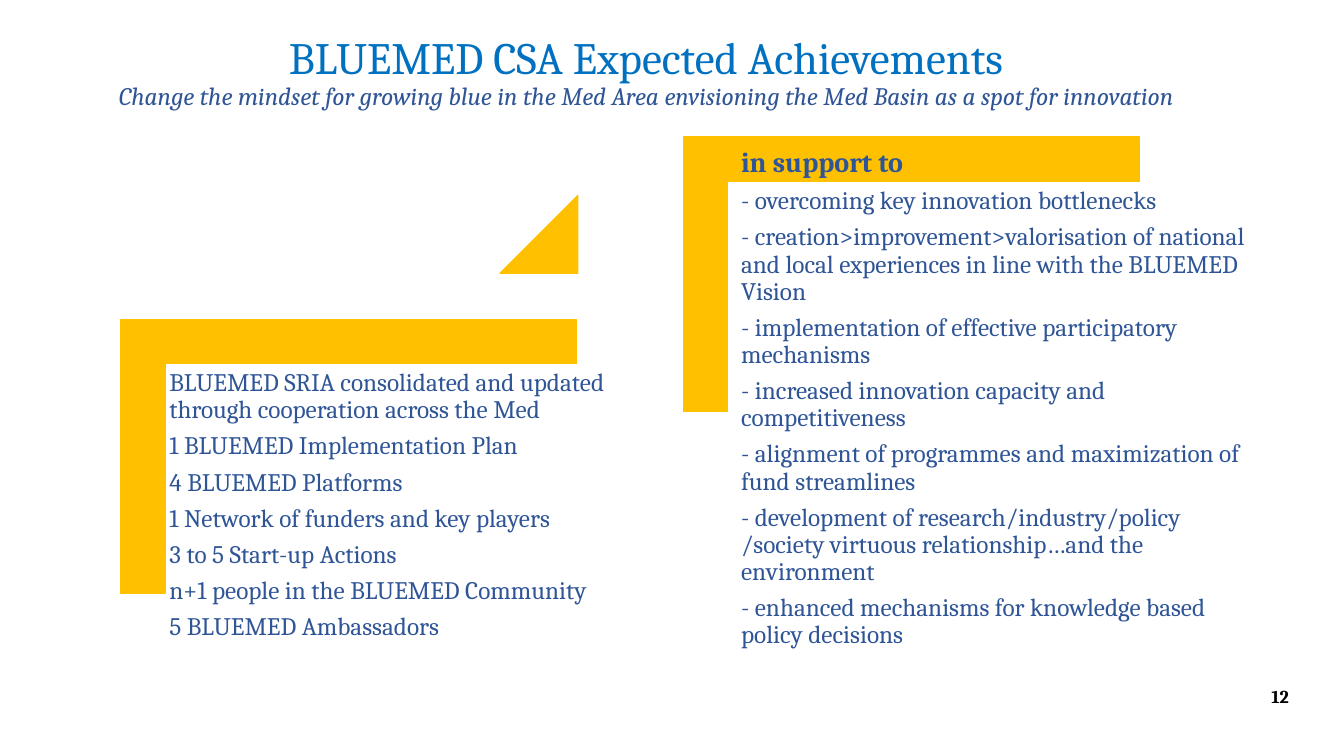
"""Build the slide on the expected achievements of BLUEMED CSA."""
from dataclasses import dataclass

from pptx import Presentation
from pptx.dml.color import RGBColor
from pptx.enum.shapes import MSO_SHAPE as Shp
from pptx.enum.text import MSO_ANCHOR as Anchor, MSO_AUTO_SIZE as Fit, PP_ALIGN as Align
from pptx.slide import Slide
from pptx.text.text import TextFrame
from pptx.util import Inches, Pt

W, H = 13.33, 7.5
FONT = "Cambria"
COLORS = {"title": "0070C0", "text": "2F5597", "gold": "FFC000", "number": "000000"}


@dataclass
class Box:
    """Place and size as percentages of the slide."""
    x: float
    y: float
    w: float
    h: float

    def emu(self) -> tuple[int, int, int, int]:
        return (Inches(W * self.x / 100), Inches(H * self.y / 100),
                Inches(W * self.w / 100), Inches(H * self.h / 100))


@dataclass
class Line:
    text: str
    size: int = 18
    color: str = "text"
    bold: bool = False
    italic: bool = False


@dataclass
class Mark:
    kind: Shp
    box: Box
    adjustments: tuple[float, ...]
    rotation: int = 0


@dataclass
class Column:
    box: Box
    inset: float
    lines: list[Line]


CORNER_W, CORNER_H = 20.41, 60.27
THICKNESS = (0.161, 0.161)
MARKS = [
    Mark(Shp.CORNER, Box(15.75, 30.27, CORNER_W, CORNER_H), THICKNESS, 90),
    Mark(Shp.ISOSCELES_TRIANGLE, Box(37.21, 25.87, 5.78, 10.27), (1,)),
    Mark(Shp.CORNER, Box(57.61, 6.13, CORNER_W, CORNER_H), THICKNESS, 90),
]

TITLE_BOX = Box(6.45, 4, 83.27, 11.47)
TITLE = [
    Line("BLUEMED CSA Expected Achievements", 32, "title"),
    Line("Change the mindset for growing blue in the Med Area envisioning "
         "the Med Basin as a spot for innovation", italic=True),
]
COLUMNS = [
    Column(Box(12.08, 48, 36.38, 45.33), 0.07, [
        Line("BLUEMED SRIA consolidated and updated through cooperation across the Med"),
        Line("1 BLUEMED Implementation Plan"),
        Line("4 BLUEMED Platforms"),
        Line("1 Network of funders and key players"),
        Line("3 to 5 Start-up Actions"),
        Line("n+1 people in the BLUEMED Community"),
        Line("5 BLUEMED Ambassadors"),
    ]),
    Column(Box(54.54, 18.53, 40.29, 62.93), 0.08, [
        Line("in support to", 20, bold=True),
        Line("- overcoming key innovation bottlenecks"),
        Line("- creation>improvement>valorisation of national and local experiences "
             "in line with the BLUEMED Vision"),
        Line("- implementation of effective participatory mechanisms"),
        Line("- increased innovation capacity and competitiveness"),
        Line("- alignment of programmes and maximization of fund streamlines"),
        Line("- development of research/industry/policy /society virtuous "
             "relationship…and the environment"),
        Line("- enhanced mechanisms for knowledge based policy decisions"),
    ]),
]
NUMBER_BOX = Box(74.12, 89.47, 22.51, 5.33)
NUMBER = [Line("12", 13, "number", bold=True)]


def rgb(name: str) -> RGBColor:
    return RGBColor.from_string(COLORS[name])


def write(tf: TextFrame, lines: list[Line], align: Align = Align.LEFT,
          spacing: float = 0.9, after: float = 0) -> None:
    tf.word_wrap = True
    tf.auto_size = Fit.NONE
    for i, line in enumerate(lines):
        p = tf.add_paragraph() if i else tf.paragraphs[0]
        p.text = line.text
        p.alignment = align
        p.line_spacing = spacing
        p.space_before = Pt(0)
        p.space_after = Pt(after * line.size)
        p.font.name = FONT
        p.font.size = Pt(line.size)
        p.font.bold = line.bold
        p.font.italic = line.italic
        p.font.color.rgb = rgb(line.color)


def add_title(s: Slide) -> None:
    sp = s.shapes.title
    sp.left, sp.top, sp.width, sp.height = TITLE_BOX.emu()
    sp.text_frame.vertical_anchor = Anchor.MIDDLE
    write(sp.text_frame, TITLE, Align.CENTER)


def add_mark(s: Slide, mark: Mark) -> None:
    sp = s.shapes.add_shape(mark.kind, *mark.box.emu())
    sp.rotation = mark.rotation
    for i, value in enumerate(mark.adjustments):
        sp.adjustments[i] = value
    sp.shadow.inherit = False
    sp.fill.solid()
    sp.fill.fore_color.rgb = rgb("gold")
    sp.line.color.rgb = rgb("gold")
    sp.line.width = Pt(1)


def add_column(s: Slide, column: Column) -> None:
    tf = s.shapes.add_textbox(*column.box.emu()).text_frame
    tf.margin_left = tf.margin_right = Inches(column.inset)
    tf.margin_top = tf.margin_bottom = Inches(column.inset)
    write(tf, column.lines, after=0.35)


def add_number(s: Slide) -> None:
    tf = s.shapes.add_textbox(*NUMBER_BOX.emu()).text_frame
    tf.vertical_anchor = Anchor.MIDDLE
    write(tf, NUMBER, Align.RIGHT, spacing=1)


def main() -> None:
    prs = Presentation()
    prs.slide_width, prs.slide_height = Inches(W), Inches(H)
    s = prs.slides.add_slide(prs.slide_layouts[5])
    add_title(s)
    for mark in MARKS:
        add_mark(s, mark)
    for column in COLUMNS:
        add_column(s, column)
    add_number(s)
    prs.save("out.pptx")


if __name__ == "__main__":
    main()
